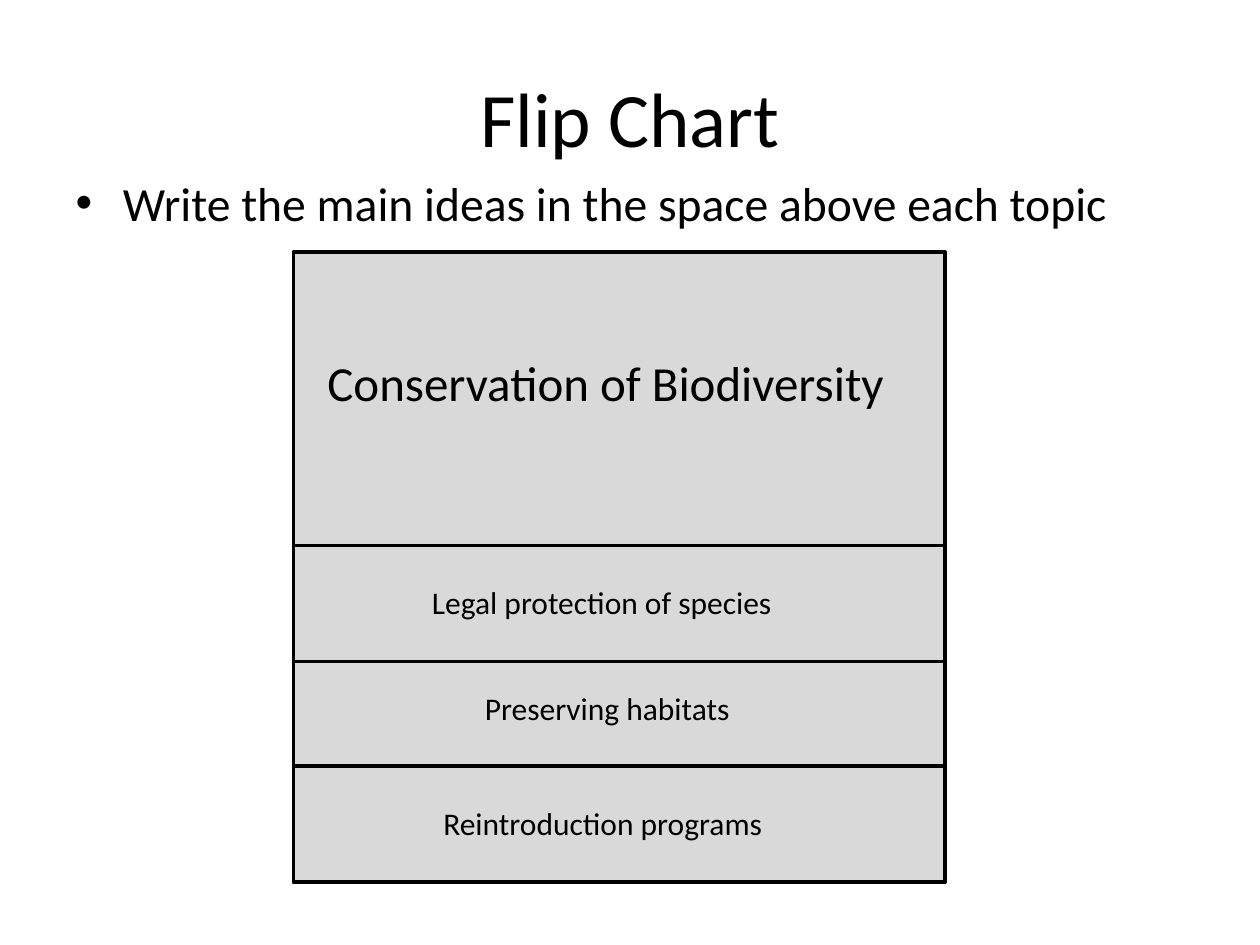
from pptx import Presentation
from pptx import util as u
from pptx.dml.color import RGBColor
from pptx.enum import shapes, text

TITLE = "Flip Chart"
INSTRUCTION = "Write the main ideas in the space above each topic"
COLORS = {"ink": "000000", "panel": "D9D9D9"}
FONT = "Calibri"

CHART_LEFT, CHART_WIDTH, CHART_BOTTOM = 2.33, 5.17, 7
# Top and bottom of each flap, from the back sheet to the front one
FLAPS = [(2, CHART_BOTTOM), (4.33, 6.41), (5.25, 6.08), (6.08, CHART_BOTTOM)]
# Label, left, top, width, height, size, wraps
LABELS = [
    ("Conservation of Biodiversity", 2.5, 2.75, 4.75, 0.57, 28, True),
    ("Legal protection of species", 3.33, 4.58, 2.93, 0.4, 18, False),
    ("Preserving habitats", 3.75, 5.42, 2.17, 0.4, 18, False),
    ("Reintroduction programs", 3.42, 6.33, 2.76, 0.4, 18, False),
]


def color(name):
    return RGBColor.from_string(COLORS[name])


def place(sp, *box):
    sp.left, sp.top, sp.width, sp.height = map(u.Inches, box)


def write(sp, words, size):
    tf = sp.text_frame
    tf.text = words
    p = tf.paragraphs[0]
    p.font.size = u.Pt(size)
    p.font.name = FONT
    p.font.color.rgb = color("ink")
    return tf


def add_flap(s, top, bottom):
    box = map(u.Inches, (CHART_LEFT, top, CHART_WIDTH, bottom - top))
    sp = s.shapes.add_shape(shapes.MSO_SHAPE.RECTANGLE, *box)
    sp.shadow.inherit = False
    sp.fill.solid()
    sp.fill.fore_color.rgb = color("panel")
    sp.line.color.rgb = color("ink")
    sp.line.width = u.Pt(2)


def add_label(s, words, left, top, width, height, size, wraps):
    sp = s.shapes.add_textbox(*map(u.Inches, (left, top, width, height)))
    tf = write(sp, words, size)
    tf.word_wrap = wraps
    tf.auto_size = text.MSO_AUTO_SIZE.SHAPE_TO_FIT_TEXT


def main():
    prs = Presentation()
    prs.slide_width, prs.slide_height = u.Inches(10), u.Inches(7.5)
    s = prs.slides.add_slide(prs.slide_layouts[1])

    title, body = s.placeholders
    place(title, 0.5, 0.3, 9, 1.25)
    tf = write(title, TITLE, 44)
    tf.vertical_anchor = text.MSO_ANCHOR.MIDDLE
    tf.paragraphs[0].alignment = text.PP_ALIGN.CENTER

    place(body, 0.5, 1.33, 9, 0.75)
    write(body, INSTRUCTION, 27.2).auto_size = text.MSO_AUTO_SIZE.NONE

    for flap in FLAPS:
        add_flap(s, *flap)
    for label in LABELS:
        add_label(s, *label)
    prs.save("out.pptx")


if __name__ == "__main__":
    main()
